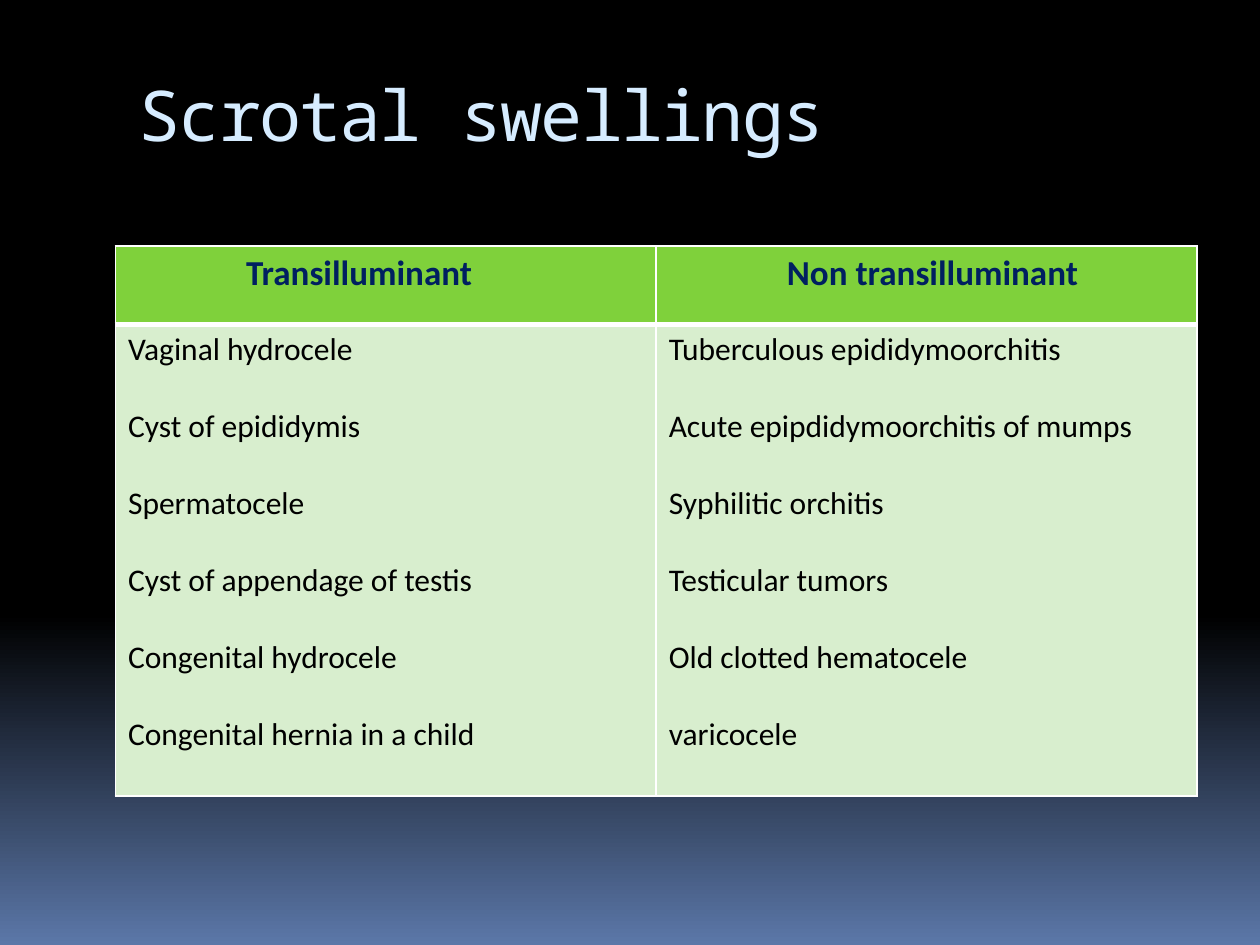
import pptx
import pptx.dml.color
import pptx.enum.text
import pptx.oxml
import pptx.oxml.ns
import pptx.util

Pt = pptx.util.Pt
COLORS = {
    "black": "000000",
    "blue": "5B77A8",
    "title": "D6ECFF",
    "navy": "002060",
    "green": "7FD13B",
    "pale": "D8EECE",
    "white": "FFFFFF",
}
COLUMNS = {
    "Transilluminant": [
        "Vaginal hydrocele",
        "Cyst of epididymis",
        "Spermatocele",
        "Cyst of appendage of testis",
        "Congenital hydrocele",
        "Congenital hernia in a child",
    ],
    "Non transilluminant": [
        "Tuberculous epididymoorchitis",
        "Acute epipdidymoorchitis of mumps",
        "Syphilitic orchitis",
        "Testicular tumors",
        "Old clotted hematocele",
        "varicocele",
    ],
}


def color(name):
    return pptx.dml.color.RGBColor.from_string(COLORS[name])


class SlideBuilder:
    title_font = "Noto Sans Mono"
    body_font = "Calibri"

    def __init__(self, slide):
        self.slide = slide

    def background(self, start, end, start_position):
        fill = self.slide.background.fill
        fill.gradient()
        fill.gradient_angle = 270
        stops = zip(fill.gradient_stops, (start, end), (start_position, 1))
        for stop, name, position in stops:
            stop.color.rgb = color(name)
            stop.position = position

    def run(self, paragraph, text, font, size, name, bold=False):
        run = paragraph.add_run()
        run.text = text
        run.font.name = font
        run.font.size = Pt(size)
        run.font.bold = bold
        run.font.color.rgb = color(name)
        return run

    def title(self, text, left, top, width, height):
        shape = self.slide.shapes.title
        shape.left, shape.top = Pt(left), Pt(top)
        shape.width, shape.height = Pt(width), Pt(height)
        frame = shape.text_frame
        frame.word_wrap = True
        frame.vertical_anchor = pptx.enum.text.MSO_ANCHOR.TOP
        frame.margin_top = Pt(1)
        paragraph = frame.paragraphs[0]
        paragraph.alignment = pptx.enum.text.PP_ALIGN.LEFT
        run = self.run(paragraph, text, self.title_font, 40, "title")
        run.font._element.set("spc", "-100")

    def borders(self, cell, top, bottom):
        properties = cell._tc.get_or_add_tcPr()
        widths = {"lnL": 1, "lnR": 1, "lnT": top, "lnB": bottom}
        # Border lines come before the fill in the cell properties
        for index, (tag, width) in enumerate(widths.items()):
            properties.insert(index, pptx.oxml.parse_xml(
                f'<a:{tag} {pptx.oxml.ns.nsdecls("a")} w="{Pt(width)}">'
                f'<a:solidFill><a:srgbClr val="{COLORS["white"]}"/></a:solidFill>'
                f'</a:{tag}>'))

    def cell(self, cell, lines, fill, size, name, bold=False, indent=0,
             gap=0, top=1, bottom=1):
        cell.fill.solid()
        cell.fill.fore_color.rgb = color(fill)
        self.borders(cell, top, bottom)
        frame = cell.text_frame
        for index, line in enumerate(lines):
            paragraph = frame.add_paragraph() if index else frame.paragraphs[0]
            if index:
                paragraph.space_before = Pt(gap)
            if indent:
                paragraph._p.get_or_add_pPr().set("marL", str(Pt(indent)))
            self.run(paragraph, line, self.body_font, size, name, bold)

    def table(self, columns, left, top, width, row_heights):
        table = self.slide.shapes.add_table(
            len(row_heights), len(columns), Pt(left), Pt(top),
            Pt(width), Pt(sum(row_heights))).table
        for row, height in zip(table.rows, row_heights):
            row.height = Pt(height)
        for index, (heading, entries) in enumerate(columns.items()):
            table.columns[index].width = Pt(width / len(columns))
            self.cell(table.cell(0, index), [heading], "green", 20, "navy",
                      bold=True, indent=67.5, bottom=3)
            self.cell(table.cell(1, index), entries, "pale", 18, "black",
                      gap=22, top=3)


def main():
    presentation = pptx.Presentation()
    presentation.slide_width, presentation.slide_height = Pt(720), Pt(540)
    # Title-only layout
    slide = presentation.slides.add_slide(presentation.slide_layouts[5])
    builder = SlideBuilder(slide)

    # Background and title
    builder.background("black", "blue", 0.65)
    builder.title("Scrotal swellings", 72, 40, 612, 72)

    # Comparison table
    builder.table(COLUMNS, 66, 140.5, 618, [45, 269.5])

    presentation.save("out.pptx")


if __name__ == "__main__":
    main()
